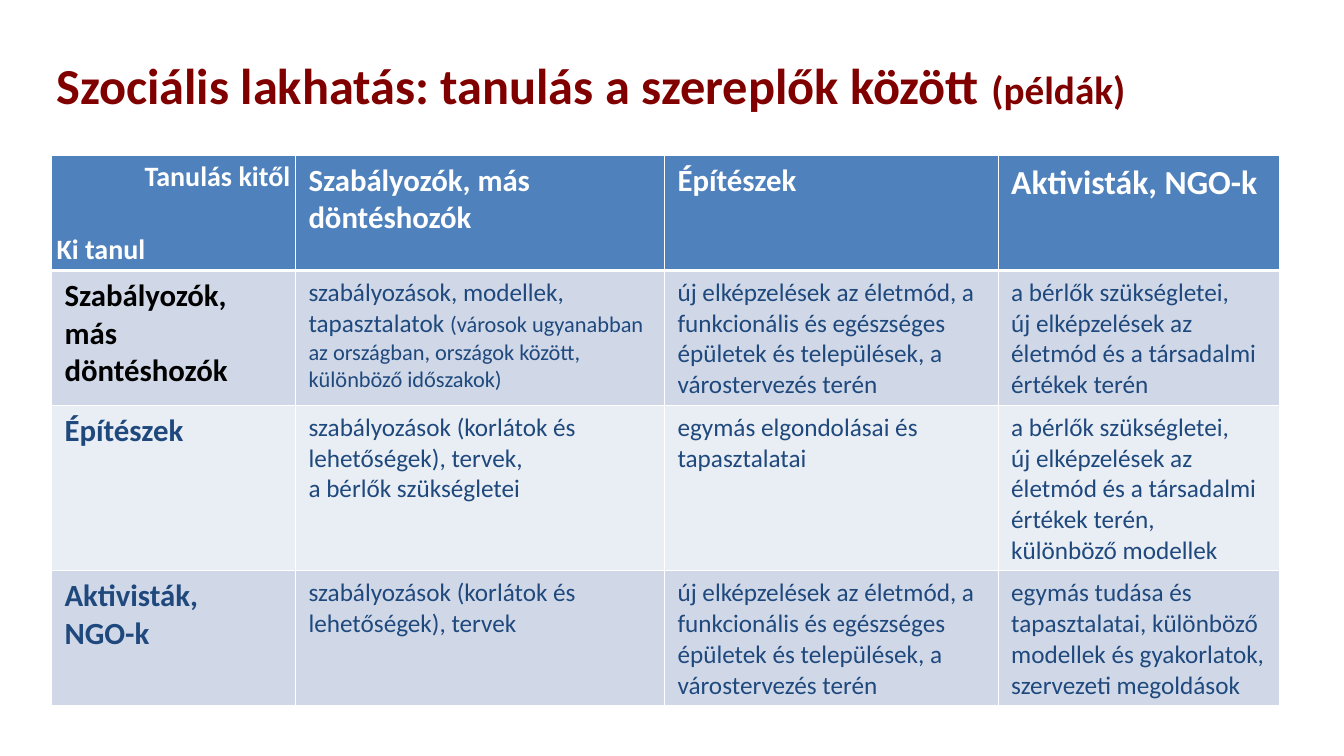
from dataclasses import dataclass

from lxml.etree import SubElement
from pptx import Presentation
from pptx.dml.color import RGBColor
from pptx.enum.text import MSO_ANCHOR, PP_ALIGN
from pptx.oxml.ns import qn
from pptx.util import Inches, Pt


@dataclass(frozen=True)
class Theme:
    font: str = "Calibri"
    title: str = "800000"
    white: str = "FFFFFF"
    black: str = "000000"
    navy: str = "1F497D"
    head: str = "4F81BD"
    bands: tuple[str, str] = ("D0D8E8", "E9EDF4")
    huge: int = 36
    big: int = 28
    wide: int = 24
    label: int = 22
    small: int = 20
    body: int = 18
    note: int = 16
    thin: int = 1
    thick: int = 3


@dataclass(frozen=True)
class Run:
    text: str
    size: int
    color: str
    bold: bool = False


@dataclass(frozen=True)
class Para:
    runs: tuple[Run, ...]
    align: PP_ALIGN = PP_ALIGN.LEFT
    before: int = 0


Cell = tuple[Para, ...]
T = Theme()
WIDTH, HEIGHT = Inches(13.33), Inches(7.5)


# Lengths as percent of the slide
def across(share: float) -> int:
    return round(WIDTH * share / 100)


def down(share: float) -> int:
    return round(HEIGHT * share / 100)


# Kinds of cell
def head(text: str, size: int = T.label) -> Cell:
    return (Para((Run(text, size, T.white, True),)),)


def label(text: str, color: str = T.navy) -> Cell:
    return (Para((Run(text, T.label, color, True),)),)


def body(*texts: str) -> Cell:
    return tuple(Para((Run(text, T.body, T.navy),)) for text in texts)


# Text
def write(frame, paras: Cell) -> None:
    frame.word_wrap = True
    for i, para in enumerate(paras):
        line = frame.paragraphs[0] if i == 0 else frame.add_paragraph()
        line.alignment = para.align
        if para.before:
            line.space_before = Pt(para.before)
        for run in para.runs:
            for j, part in enumerate(run.text.split("\n")):
                if j:
                    line.add_line_break()
                piece = line.add_run()
                piece.text = part
                font = piece.font
                font.name, font.size, font.bold = T.font, Pt(run.size), run.bold
                font.color.rgb = RGBColor.from_string(run.color)


def edge(cell, side: str, width: int) -> None:
    line = SubElement(cell._tc.get_or_add_tcPr(), qn(f"a:ln{side}"), w=str(Pt(width)))
    fill = SubElement(line, qn("a:solidFill"))
    SubElement(fill, qn("a:srgbClr"), val=T.white)


def paint(cell, paras: Cell, row: int, pad: tuple[float, float]) -> None:
    cell.margin_left = cell.margin_right = Inches(pad[0])
    cell.margin_top = cell.margin_bottom = Inches(pad[1])
    for side in "LRTB":
        heavy = (side == "B" and row == 0) or (side == "T" and row == 1)
        edge(cell, side, T.thick if heavy else T.thin)
    cell.fill.solid()
    color = T.bands[(row - 1) % 2] if row else T.head
    cell.fill.fore_color.rgb = RGBColor.from_string(color)
    write(cell.text_frame, paras)


# Content
TITLE = Para((
    Run("Szociális lakhatás: tanulás a szereplők között ", T.huge, T.title, True),
    Run("(példák)", T.big, T.title, True),
))
CORNER = (
    Para((Run("Tanulás kitől", T.small, T.white, True),), PP_ALIGN.RIGHT),
    Para((Run("Ki tanul", T.small, T.white, True),), before=27),
)
RULES = (Para((
    Run("szabályozások, modellek, tapasztalatok ", T.body, T.navy),
    Run("(városok ugyanabban az országban, országok között, különböző időszakok)",
        T.note, T.navy),
)),)
MAKERS = "Szabályozók, más döntéshozók"
NEEDS = "a bérlők szükségletei,"
IDEAS = "új elképzelések az életmód és a társadalmi értékek terén"
PLANS = "szabályozások (korlátok és lehetőségek), tervek"
TOWNS = body("új elképzelések az életmód, a funkcionális és egészséges "
             "épületek és települések, a várostervezés terén")
GRID: tuple[tuple[Cell, ...], ...] = (
    (CORNER, head(MAKERS), head("Építészek"), head("Aktivisták, NGO-k", T.wide)),
    (label(MAKERS, T.black), RULES, TOWNS, body(NEEDS, IDEAS)),
    (label("Építészek"), body(PLANS + ",\na bérlők szükségletei"),
     body("egymás elgondolásai és tapasztalatai"),
     body(NEEDS, IDEAS + ", különböző modellek")),
    (label("Aktivisták,\nNGO-k"), body(PLANS), TOWNS,
     body("egymás tudása és tapasztalatai, különböző modellek és gyakorlatok, "
          "szervezeti megoldások")),
)
COLS = (18.15, 27.46, 24.83, 20.93)
ROWS = (10.53, 13.2, 14, 17.73)


def main() -> None:
    deck = Presentation()
    deck.slide_width, deck.slide_height = WIDTH, HEIGHT
    slide = deck.slides.add_slide(deck.slide_layouts[6])

    # Title
    box = slide.shapes.add_textbox(across(3.45), down(5.87), across(93.17), down(11.47))
    frame = box.text_frame
    frame.vertical_anchor = MSO_ANCHOR.MIDDLE
    write(frame, (TITLE,))
    frame.paragraphs[0].line_spacing = 0.9

    # Table
    holder = slide.shapes.add_table(len(ROWS), len(COLS), across(3.83), down(20.53),
                                    across(sum(COLS)), down(72.4))
    table = holder.table
    for col, share in zip(table.columns, COLS):
        col.width = across(share)
    for row, share in zip(table.rows, ROWS):
        row.height = down(share)
    holder.height = down(72.4)
    for r, line in enumerate(GRID):
        for c, paras in enumerate(line):
            pad = (0.05, 0.05) if r == c == 0 else (0.13, 0.07)
            paint(table.cell(r, c), paras, r, pad)

    deck.save("out.pptx")


if __name__ == "__main__":
    main()
